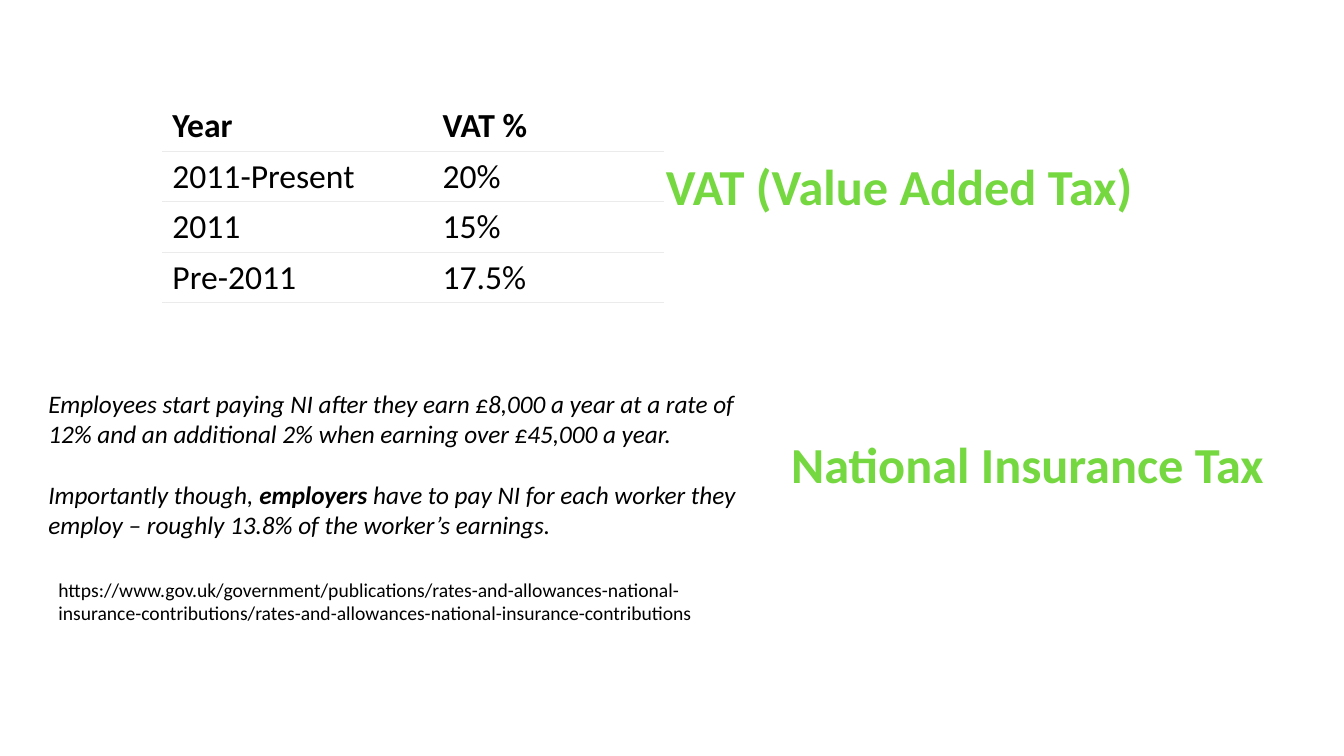
import lxml.etree
import pptx
import pptx.dml.color
import pptx.enum.text
import pptx.oxml.ns
import pptx.util

Pt = pptx.util.Pt
qn = pptx.oxml.ns.qn

FONT = "Calibri"
COLOURS = {"heading": "75D840", "text": "000000", "rule": "EBEBEB", "cell": "FFFFFF"}

VAT_RATES = [
    ("Year", "VAT %"),
    ("2011-Present", "20%"),
    ("2011", "15%"),
    ("Pre-2011", "17.5%"),
]
TABLE_LEFT, TABLE_TOP, ROW_HEIGHT = 116, 72, 36
COLUMN_WIDTHS = (193, 165.6)

HEADING = {"size": 36, "colour": "heading", "bold": True, "centred": True, "wrap": False}
SOURCE = {"size": 14}
NOTES = {"size": 18, "italic": True, "gap": 22}

TEXTS = [
    ((555.8, 306, 356.4, 51), HEADING, [[("National Insurance Tax", False)]]),
    ((466.6, 107.3, 351.4, 51), HEADING, [[("VAT (Value Added Tax)", False)]]),
    ((34.6, 409, 480.2, 41), SOURCE, [[(
        "https://www.gov.uk/government/publications/rates-and-allowances-national-"
        "insurance-contributions/rates-and-allowances-national-insurance-contributions",
        False)]]),
    ((27.4, 273.6, 529.2, 116.6), NOTES, [
        [("Employees start paying NI after they earn £8,000 a year at a rate of "
          "12% and an additional 2% when earning over £45,000 a year.", False)],
        [("Importantly though, ", False), ("employers ", True),
         ("have to pay NI for each worker they employ – roughly 13.8% of the "
          "worker’s earnings.", False)],
    ]),
]


def colour(name):
    return pptx.dml.color.RGBColor.from_string(COLOURS[name])


def add_span(para, text, size, name="text", bold=False, italic=False):
    span = para.add_run()
    span.text = text
    span.font.name = FONT
    span.font.size = Pt(size)
    span.font.bold = bold
    span.font.italic = italic
    span.font.color.rgb = colour(name)


def add_text(page, place, style, paragraphs):
    box = page.shapes.add_textbox(*map(Pt, place))
    frame = box.text_frame
    frame.word_wrap = style.get("wrap", True)
    frame.auto_size = pptx.enum.text.MSO_AUTO_SIZE.SHAPE_TO_FIT_TEXT
    for index, spans in enumerate(paragraphs):
        para = frame.add_paragraph() if index else frame.paragraphs[0]
        if style.get("centred"):
            para.alignment = pptx.enum.text.PP_ALIGN.CENTER
        if index < len(paragraphs) - 1:
            para.space_after = Pt(style.get("gap", 0))
        for text, bold in spans:
            add_span(para, text, style["size"], style.get("colour", "text"),
                     bold or style.get("bold", False), style.get("italic", False))


def set_borders(cell, ruled_sides):
    properties = cell._tc.get_or_add_tcPr()
    for position, side in enumerate("LRTB"):
        line = lxml.etree.Element(qn("a:ln" + side), w=str(int(Pt(0.75))))
        if side in ruled_sides:
            fill = lxml.etree.SubElement(line, qn("a:solidFill"))
            lxml.etree.SubElement(fill, qn("a:srgbClr"), val=COLOURS["rule"])
        else:
            lxml.etree.SubElement(line, qn("a:noFill"))
        properties.insert(position, line)


def add_vat_table(page):
    table = page.shapes.add_table(
        len(VAT_RATES), len(COLUMN_WIDTHS), Pt(TABLE_LEFT), Pt(TABLE_TOP),
        Pt(sum(COLUMN_WIDTHS)), Pt(ROW_HEIGHT * len(VAT_RATES))).table
    table.horz_banding = False
    for column, width in zip(table.columns, COLUMN_WIDTHS):
        column.width = Pt(width)
    for row, values in enumerate(VAT_RATES):
        for column, value in enumerate(values):
            cell = table.cell(row, column)
            cell.fill.solid()
            cell.fill.fore_color.rgb = colour("cell")
            cell.vertical_anchor = pptx.enum.text.MSO_ANCHOR.MIDDLE
            add_span(cell.text_frame.paragraphs[0], value, 24, bold=row == 0)
            set_borders(cell, "TB" if row else "B")


def main():
    """Build the slide on VAT and National Insurance rates."""
    deck = pptx.Presentation()
    deck.slide_width, deck.slide_height = Pt(960), Pt(540)
    page = deck.slides.add_slide(deck.slide_layouts[6])
    headings, passages = TEXTS[:2], TEXTS[2:]
    for item in headings:
        add_text(page, *item)
    add_vat_table(page)
    for item in passages:
        add_text(page, *item)
    deck.save("out.pptx")


if __name__ == "__main__":
    main()
